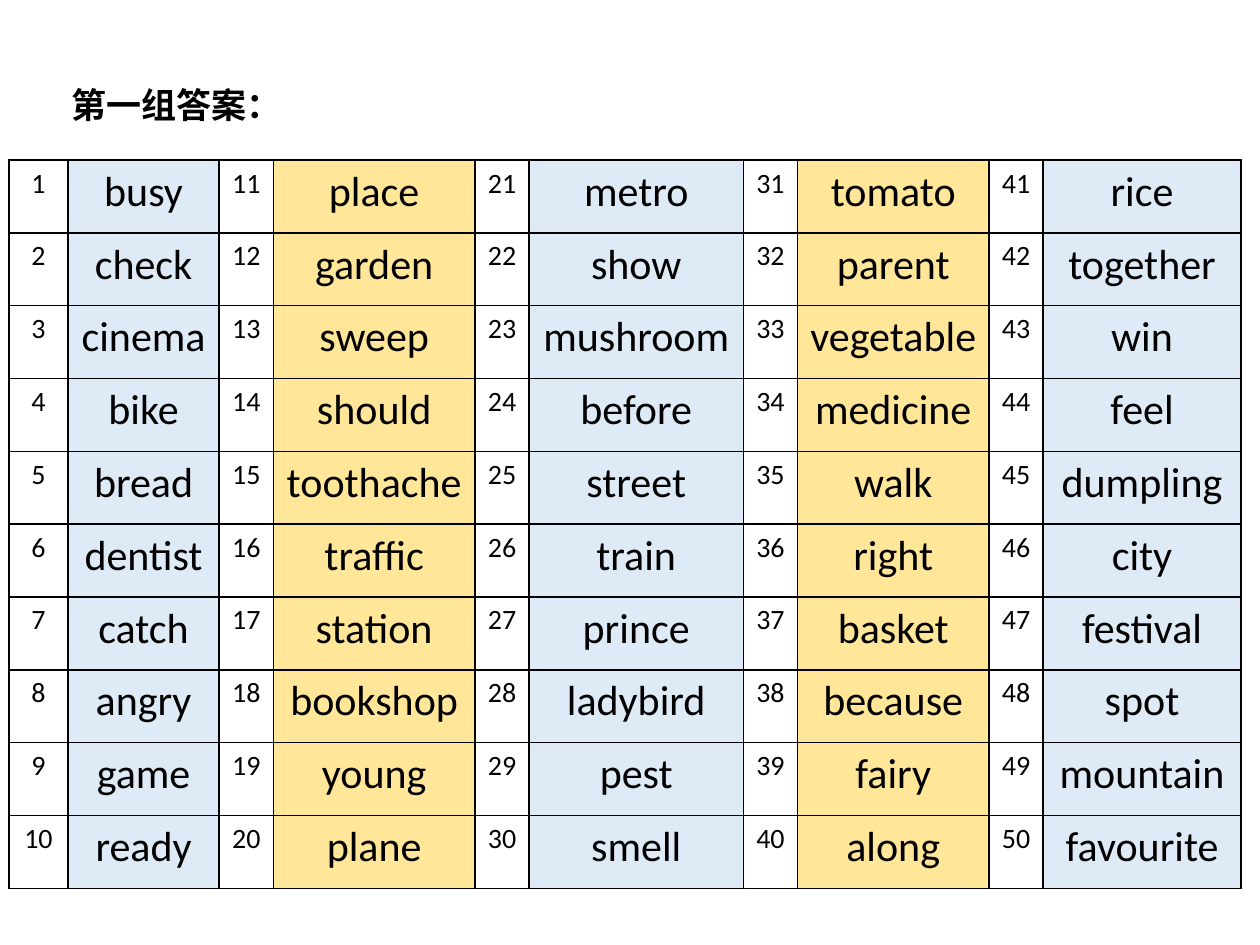
from lxml.etree import SubElement
from pptx import Presentation
from pptx.dml.color import RGBColor
from pptx.enum.text import MSO_AUTO_SIZE as Fit, PP_ALIGN as Align
from pptx.oxml import parse_xml
from pptx.oxml.ns import nsdecls, qn
from pptx.util import Inches, Pt

BLACK = RGBColor(0x00, 0x00, 0x00)
BLUE = RGBColor(0xDE, 0xEB, 0xF7)
GOLD = RGBColor(0xFF, 0xE6, 0x99)

TITLE = {"name": "Calibri", "size": Pt(20), "bold": True}
NUMBER = {"name": "Calibri", "size": Pt(16), "bold": False}
WORD = {"name": "Calibri", "size": Pt(24), "bold": False}

GROUPS = [
    "busy check cinema bike bread dentist catch angry game ready",
    "place garden sweep should toothache traffic station bookshop young plane",
    "metro show mushroom before street train prince ladybird pest smell",
    "tomato parent vegetable medicine walk right basket because fairy along",
    "rice together win feel dumpling city festival spot mountain favourite",
]
ROWS = 10
WIDTHS = [0.47, 1.2, 0.43, 1.6, 0.43, 1.7, 0.43, 1.52, 0.43, 1.57]
HEIGHT = 5.78


def write(para, text, style):
    run = para.add_run()
    run.text = text
    for key, value in style.items():
        setattr(run.font, key, value)
    run.font.color.rgb = BLACK


def add_title(slide, text):
    box = slide.shapes.add_textbox(
        Inches(0.47), Inches(0.61), Inches(2.84), Inches(0.43))
    frame = box.text_frame
    frame.word_wrap = True
    frame.auto_size = Fit.SHAPE_TO_FIT_TEXT
    write(frame.paragraphs[0], text, TITLE)


def add_border(cell):
    """Draw a 1 pt line on all four sides; lines must come before the fill."""
    props = cell._tc.get_or_add_tcPr()
    for place, side in enumerate(("lnL", "lnR", "lnT", "lnB")):
        line = parse_xml(f'<a:{side} {nsdecls("a")} w="{Pt(1)}"/>')
        fill = SubElement(line, qn("a:solidFill"))
        SubElement(fill, qn("a:srgbClr"), val=str(BLACK))
        props.insert(place, line)


def fill_cell(cell, text, style, color=None):
    para = cell.text_frame.paragraphs[0]
    para.alignment = Align.CENTER
    write(para, text, style)
    if color is None:
        cell.fill.background()
    else:
        cell.fill.solid()
        cell.fill.fore_color.rgb = color
    add_border(cell)


def add_words(slide):
    """Each group takes two columns: the running number and the word."""
    table = slide.shapes.add_table(
        ROWS, len(WIDTHS), Inches(0.07), Inches(1.27),
        Inches(sum(WIDTHS)), Inches(HEIGHT)).table
    table.first_row = table.horz_banding = False
    for col, width in zip(table.columns, WIDTHS):
        col.width = Inches(width)
    for group, words in enumerate(GROUPS):
        color = GOLD if group % 2 else BLUE
        for row, word in enumerate(words.split()):
            number = str(group * ROWS + row + 1)
            fill_cell(table.cell(row, 2 * group), number, NUMBER)
            fill_cell(table.cell(row, 2 * group + 1), word, WORD, color)


def main():
    deck = Presentation()
    deck.slide_width, deck.slide_height = Inches(10), Inches(7.5)
    slide = deck.slides.add_slide(deck.slide_layouts[6])
    add_words(slide)
    add_title(slide, "第一组答案：")
    deck.save("out.pptx")


if __name__ == "__main__":
    main()
